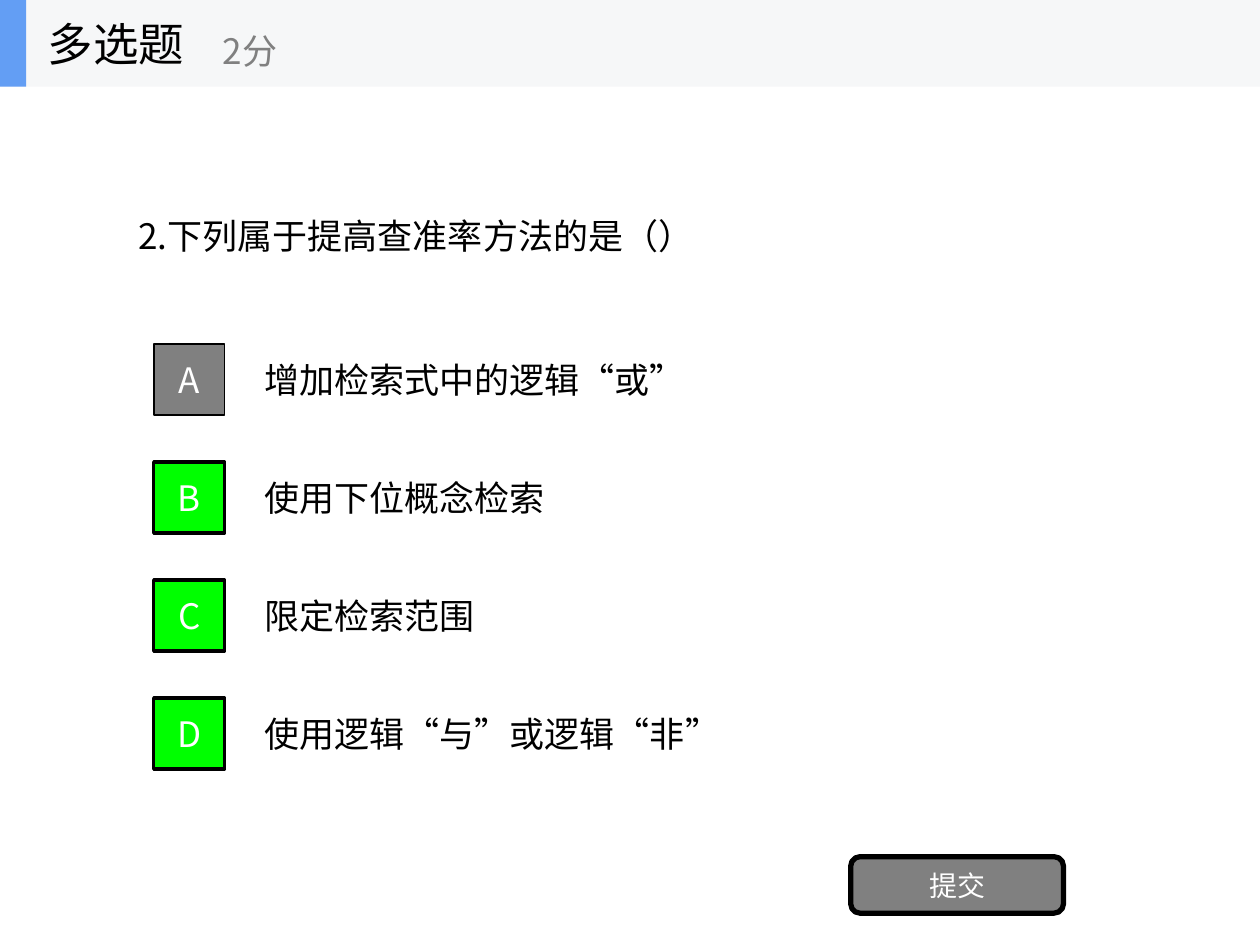
from dataclasses import dataclass

from lxml import etree
from pptx import Presentation
from pptx.dml.color import RGBColor
from pptx.enum.shapes import MSO_SHAPE
from pptx.enum.text import MSO_ANCHOR, PP_ALIGN
from pptx.oxml.ns import qn
from pptx.util import Cm, Pt

RECTANGLE = MSO_SHAPE.RECTANGLE
ROUNDED = MSO_SHAPE.ROUNDED_RECTANGLE
MIDDLE = MSO_ANCHOR.MIDDLE
LEFT, CENTER = PP_ALIGN.LEFT, PP_ALIGN.CENTER
TITLE_ONLY = 5


@dataclass(frozen=True)
class Theme:
    font: str = "Noto Sans CJK SC"
    ink: str = "000000"
    white: str = "FFFFFF"
    gray: str = "808080"
    correct: str = "00FF00"
    header: str = "F6F7F8"
    accent: str = "639EF4"
    title_size: int = 26
    body_size: int = 20
    button_size: int = 16


@dataclass(frozen=True)
class Box:
    """Position and size in centimetres."""
    left: float
    top: float
    width: float
    height: float

    def lengths(self) -> tuple:
        return Cm(self.left), Cm(self.top), Cm(self.width), Cm(self.height)


@dataclass(frozen=True)
class Option:
    letter: str
    text: str
    text_width: float
    correct: bool


THEME = Theme()
OPTIONS = (
    Option("A", "增加检索式中的逻辑“或”", 11.79, False),
    Option("B", "使用下位概念检索", 7.06, True),
    Option("C", "限定检索范围", 9.04, True),
    Option("D", "使用逻辑“与”或逻辑“非”", 9.96, True),
)
HEADER_HEIGHT = 1.75
FIRST_CENTER, OPTION_PITCH = 7.65, 2.38
MARK_LEFT, MARK_SIZE = 3.1, 1.43
TEXT_LEFT, TEXT_HEIGHT = 5.08, 1.12


def write_text(shape, text: str, *, size: int = THEME.body_size,
               color: str = THEME.ink, align=LEFT) -> None:
    frame = shape.text_frame
    frame.word_wrap = True
    frame.vertical_anchor = MIDDLE
    paragraph = frame.paragraphs[0]
    paragraph.alignment = align
    run = paragraph.add_run()
    run.text = text
    run.font.size = Pt(size)
    run.font.name = THEME.font
    run.font.color.rgb = RGBColor.from_string(color)
    east_asian = etree.SubElement(run.font._element, qn("a:ea"))
    east_asian.set("typeface", THEME.font)


def add_text(slide, box: Box, text: str, **text_format) -> None:
    write_text(slide.shapes.add_textbox(*box.lengths()), text, **text_format)


def add_block(slide, box: Box, fill: str, *, kind=RECTANGLE, line_width: float = 0):
    shape = slide.shapes.add_shape(kind, *box.lengths())
    shape.shadow.inherit = False
    shape.fill.solid()
    shape.fill.fore_color.rgb = RGBColor.from_string(fill)
    if line_width:
        shape.line.color.rgb = RGBColor.from_string(THEME.ink)
        shape.line.width = Pt(line_width)
    else:
        shape.line.fill.background()
    return shape


def add_option(slide, option: Option, center: float) -> None:
    text_box = Box(TEXT_LEFT, center - TEXT_HEIGHT / 2, option.text_width, TEXT_HEIGHT)
    add_text(slide, text_box, option.text)
    mark = add_block(
        slide,
        Box(MARK_LEFT, center - MARK_SIZE / 2, MARK_SIZE, MARK_SIZE),
        THEME.correct if option.correct else THEME.gray,
        line_width=2 if option.correct else 1,
    )
    write_text(mark, option.letter, color=THEME.white, align=CENTER)


def add_header(slide) -> None:
    """Draw the header band and bring the title in front of it."""
    add_block(slide, Box(0, 0, 25.4, HEADER_HEIGHT), THEME.header)
    add_block(slide, Box(0, 0, 0.53, HEADER_HEIGHT), THEME.accent)
    title = slide.shapes.title
    title.left, title.top, title.width, title.height = Box(
        0.71, 0, 5.28, HEADER_HEIGHT).lengths()
    write_text(title, "多选题", size=THEME.title_size)
    title.element.getparent().append(title.element)
    add_text(slide, Box(4.24, 0.3, 6.35, 1.42), "2分", color=THEME.gray)


def main() -> None:
    presentation = Presentation()
    presentation.slide_width, presentation.slide_height = Cm(25.4), Cm(19.05)
    slide = presentation.slides.add_slide(presentation.slide_layouts[TITLE_ONLY])

    add_text(slide, Box(2.54, 4.19, 14.38, TEXT_HEIGHT), "2.下列属于提高查准率方法的是（）")
    for row, option in enumerate(OPTIONS):
        add_option(slide, option, FIRST_CENTER + row * OPTION_PITCH)
    button = add_block(slide, Box(17.15, 17.27, 4.29, 1.14), THEME.gray,
                       kind=ROUNDED, line_width=3)
    write_text(button, "提交", size=THEME.button_size, color=THEME.white, align=CENTER)
    add_header(slide)

    presentation.save("out.pptx")


if __name__ == "__main__":
    main()
